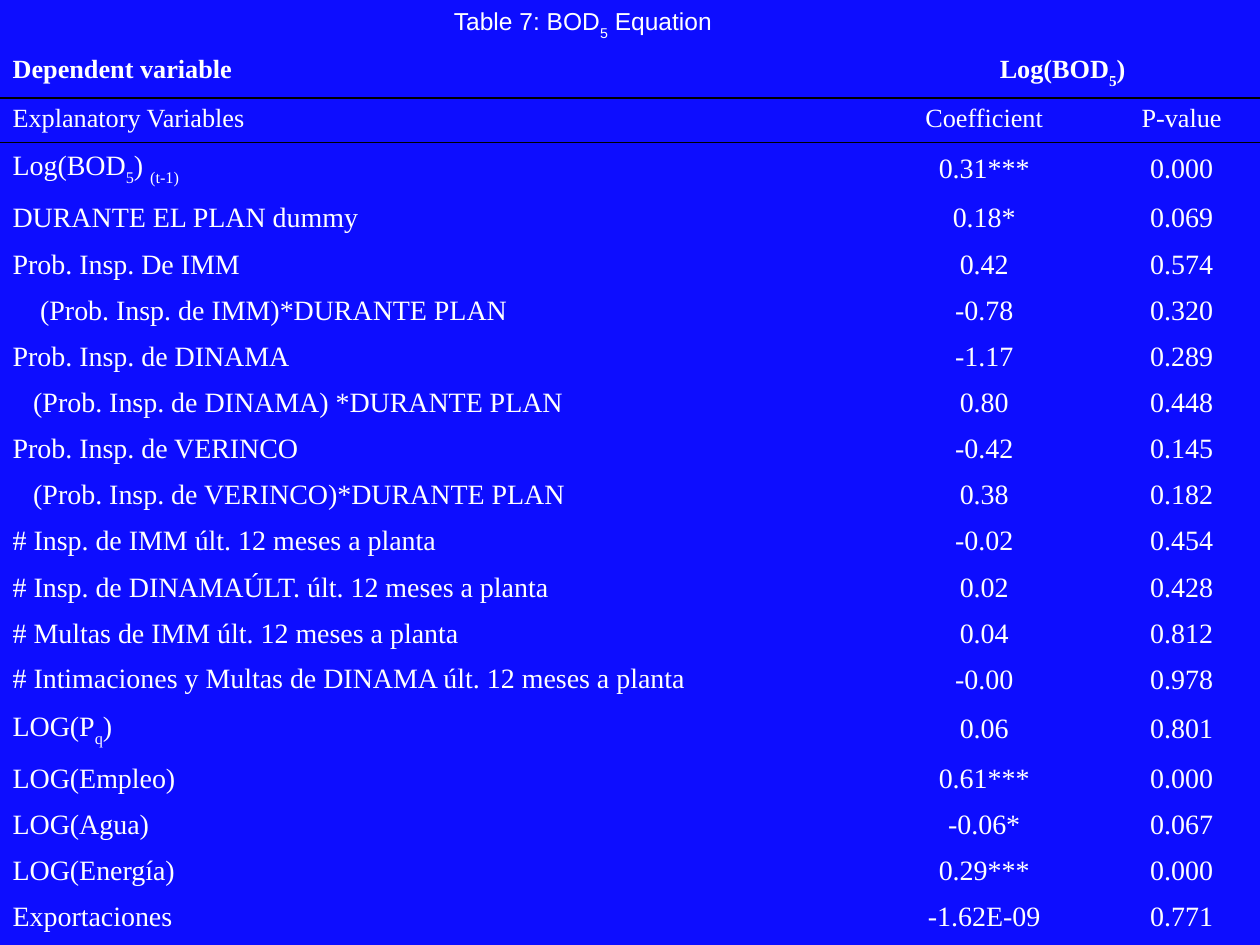
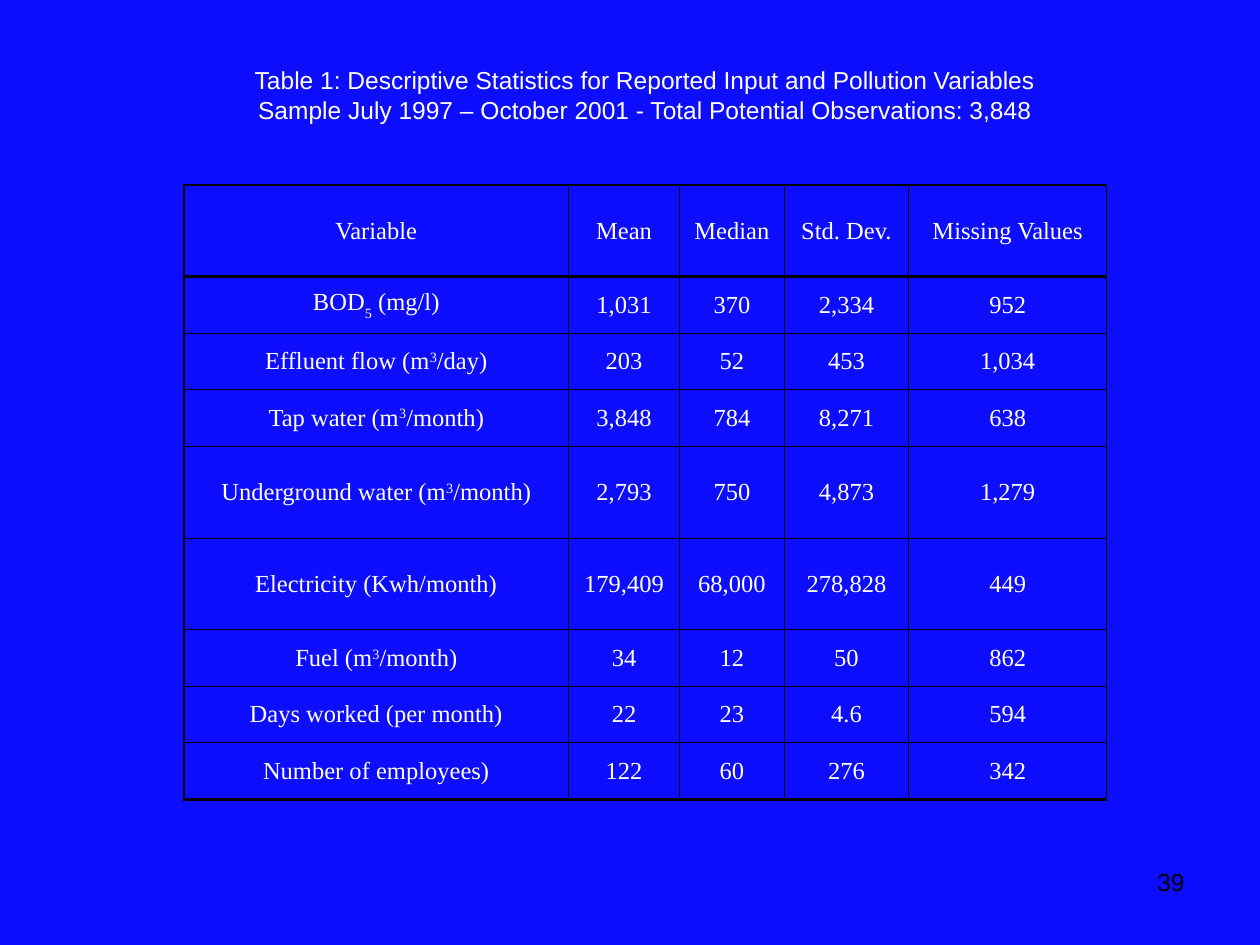
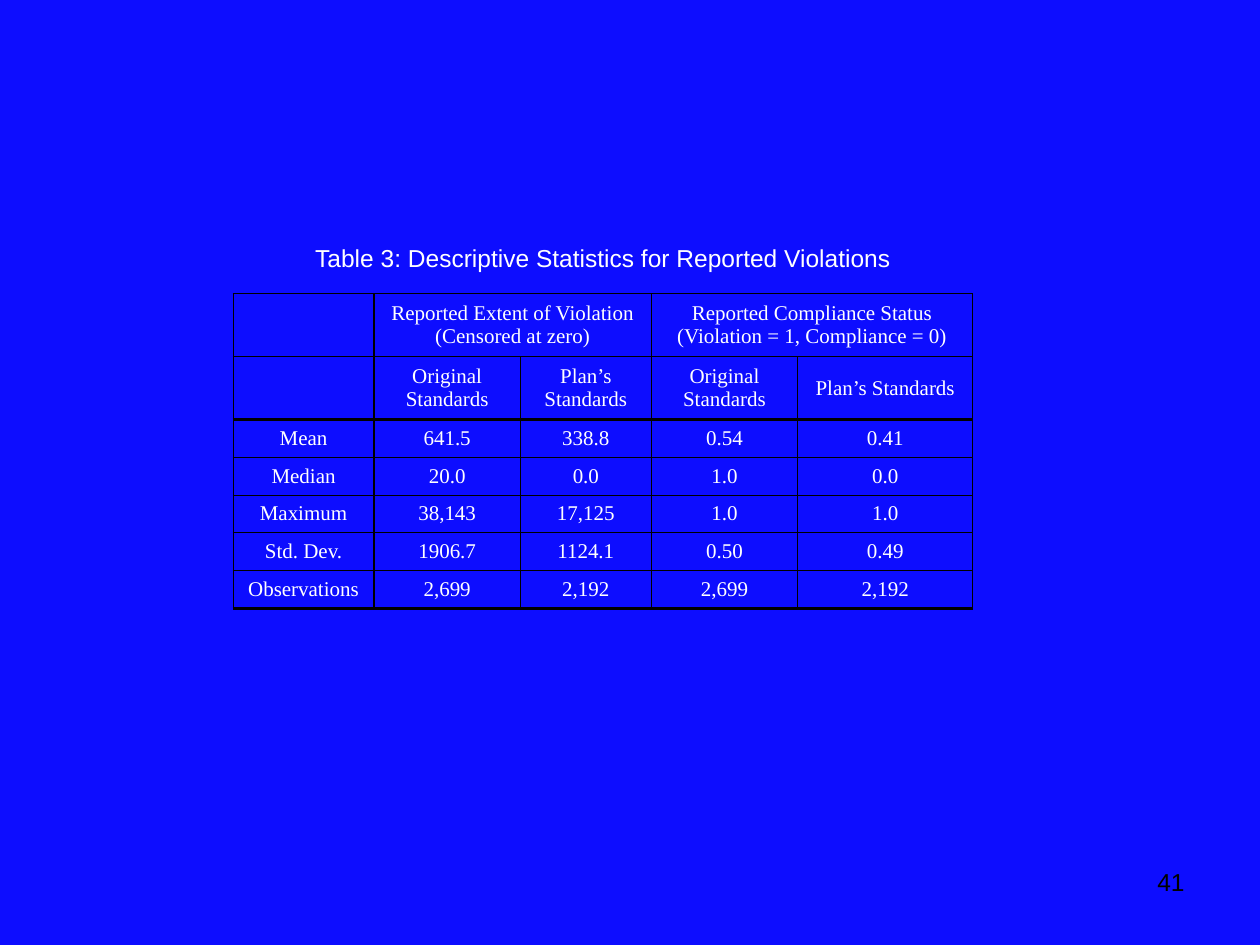
"""Builds three slides of regression and descriptive-statistics tables."""
from dataclasses import dataclass

from lxml.etree import SubElement
from pptx import Presentation
from pptx.dml.color import RGBColor as Rgb
from pptx.enum.text import MSO_ANCHOR as Anchor, MSO_AUTO_SIZE as AutoSize, PP_ALIGN as Align
from pptx.oxml.ns import qn
from pptx.util import Cm, Pt


@dataclass(frozen=True)
class Theme:
    background: str = "0D0DFF"
    text: str = "FFFFFF"
    line: str = "000000"
    heading_font: str = "Arial"
    table_font: str = "Times New Roman"
    heading_size: int = 14
    regression_size: int = 16
    regression_head_size: int = 15
    inputs_size: int = 14
    violations_size: int = 12
    hairline: float = 0.75
    rule: float = 1
    heavy_rule: float = 2


THEME = Theme()
BASELINES = {"_": "-30000", "^": "30000"}

REGRESSION_ROWS = [
    ["Dependent variable", "Log(BOD|_5|)", ""],
    ["Explanatory Variables", "Coefficient", "P-value"],
    ["Log(BOD|_5|) |_(t-1)", "0.31***", "0.000"],
    ["DURANTE EL PLAN dummy", "0.18*", "0.069"],
    ["Prob. Insp. De IMM", "0.42", "0.574"],
    ["(Prob. Insp. de IMM)*DURANTE PLAN", "-0.78", "0.320"],
    ["Prob. Insp. de DINAMA", "-1.17", "0.289"],
    ["(Prob. Insp. de DINAMA) *DURANTE PLAN", "0.80", "0.448"],
    ["Prob. Insp. de VERINCO", "-0.42", "0.145"],
    ["(Prob. Insp. de VERINCO)*DURANTE PLAN", "0.38", "0.182"],
    ["# Insp. de IMM últ. 12 meses a planta", "-0.02", "0.454"],
    ["# Insp. de DINAMAÚLT. últ. 12 meses a planta", "0.02", "0.428"],
    ["# Multas de IMM últ. 12 meses a planta", "0.04", "0.812"],
    ["# Intimaciones y Multas de DINAMA últ. 12 meses a planta", "-0.00", "0.978"],
    ["LOG(P|_q|)", "0.06", "0.801"],
    ["LOG(Empleo)", "0.61***", "0.000"],
    ["LOG(Agua)", "-0.06*", "0.067"],
    ["LOG(Energía)", "0.29***", "0.000"],
    ["Exportaciones", "-1.62E-09", "0.771"],
]
INPUT_ROWS = [
    ["Variable", "Mean", "Median", "Std. Dev.", "Missing Values"],
    ["BOD|_5| (mg/l)", "1,031", "370", "2,334", "952"],
    ["Effluent flow (m|^3|/day)", "203", "52", "453", "1,034"],
    ["Tap water (m|^3|/month)", "3,848", "784", "8,271", "638"],
    ["Underground water (m|^3|/month)", "2,793", "750", "4,873", "1,279"],
    ["Electricity (Kwh/month)", "179,409", "68,000", "278,828", "449"],
    ["Fuel (m|^3|/month)", "34", "12", "50", "862"],
    ["Days worked (per month)", "22", "23", "4.6", "594"],
    ["Number of employees)", "122", "60", "276", "342"],
]
VIOLATION_ROWS = [
    ["", "Reported Extent of Violation\n(Censored at zero)", "",
     "Reported Compliance Status\n(Violation = 1, Compliance = 0)", ""],
    [""] + ["Original Standards", "Plan’s Standards"] * 2,
    ["Mean", "641.5", "338.8", "0.54", "0.41"],
    ["Median", "20.0", "0.0", "1.0", "0.0"],
    ["Maximum", "38,143", "17,125", "1.0", "1.0"],
    ["Std. Dev.", "1906.7", "1124.1", "0.50", "0.49"],
    ["Observations", "2,699", "2,192", "2,699", "2,192"],
]


def apply(target, values):
    """Set each named attribute of the target."""
    for name, value in values.items():
        setattr(target, name, value)


class Deck:
    """Holds the theme, the presentation and the current slide."""

    def __init__(self, theme):
        self.theme = theme
        self.presentation = Presentation()
        apply(self.presentation, {"slide_width": Cm(25.4), "slide_height": Cm(19.05)})
        fill = self.presentation.slide_master.background.fill
        fill.solid()
        fill.fore_color.rgb = Rgb.from_string(theme.background)
        self.slide = None

    def add_text(self, frame, text, align, color, **font):
        """Add paragraphs split by line breaks, with |_sub| and |^super| parts."""
        for index, line in enumerate(text.split("\n")):
            paragraph = frame.add_paragraph() if index else frame.paragraphs[0]
            paragraph.alignment = align
            for part in filter(None, line.split("|")):
                run = paragraph.add_run()
                run.text = part.lstrip("_^")
                apply(run.font, font)
                run.font.color.rgb = Rgb.from_string(color)
                if part[0] in BASELINES:
                    run.font._element.set("baseline", BASELINES[part[0]])

    def add_slide(self, title, box, align=Align.CENTER, wrap=True):
        """Start a title-only slide with its formatted title."""
        layout = self.presentation.slide_layouts.get_by_name("Title Only")
        self.slide = self.presentation.slides.add_slide(layout)
        shape = self.slide.shapes.title
        apply(shape, dict(zip(("left", "top", "width", "height"), map(Cm, box))))
        apply(shape.text_frame, {"vertical_anchor": Anchor.TOP, "word_wrap": wrap,
                                 "auto_size": AutoSize.NONE})
        self.add_text(shape.text_frame, title, align, self.theme.text,
                      name=self.theme.heading_font, size=Pt(self.theme.heading_size))

    def add_page_number(self, number):
        """Add the page number at the lower right."""
        box = self.slide.shapes.add_textbox(Cm(18.21), Cm(17.35), Cm(5.92), Cm(1.32))
        box.text_frame.word_wrap = True
        self.add_text(box.text_frame, str(number), Align.RIGHT, self.theme.line,
                      name=self.theme.heading_font, size=Pt(self.theme.heading_size))

    def draw_borders(self, cell, widths):
        """Draw the left, right, top and bottom borders of a cell."""
        properties = cell._tc.get_or_add_tcPr()
        for side, width in zip("LRTB", widths):
            line = SubElement(properties, qn(f"a:ln{side}"), w=str(Pt(width)))
            if width:
                fill = SubElement(line, qn("a:solidFill"))
                SubElement(fill, qn("a:srgbClr"), val=self.theme.line)
            else:
                SubElement(line, qn("a:noFill"))

    def add_table(self, rows, position, widths, heights, size, grid, rules, merges=(),
                  first_align=Align.CENTER, row_fonts=None, cell_formats=None):
        """Add a transparent table; rules maps a horizontal line's index to its width."""
        left, top = map(Cm, position)
        table = self.slide.shapes.add_table(
            len(rows), len(widths), left, top, Cm(sum(widths)), Cm(sum(heights))).table
        apply(table, {"first_row": False, "horz_banding": False})
        for column, width in zip(table.columns, widths):
            column.width = Cm(width)
        for row, height in zip(table.rows, heights):
            row.height = Cm(height)
        for row, column in merges:
            table.cell(row, column).merge(table.cell(row, column + 1))
        for r, row in enumerate(rows):
            font = {"name": self.theme.table_font, "size": Pt(size), "bold": False}
            font.update((row_fonts or {}).get(r, {}))
            for c, text in enumerate(row):
                cell = table.cell(r, c)
                self.draw_borders(cell, (grid, grid, rules.get(r, grid), rules.get(r + 1, grid)))
                cell.fill.background()
                cell.vertical_anchor = Anchor.MIDDLE
                apply(cell, (cell_formats or {}).get((r, c), {}))
                self.add_text(cell.text_frame, text, Align.CENTER if c else first_align,
                              self.theme.text, **font)


def main():
    """Build and save the presentation."""
    deck = Deck(THEME)

    deck.add_slide("Table 7: BOD|_5| Equation ", (7.92, 0, 7.8, 1.45))
    head_size = Pt(THEME.regression_head_size)
    at_top = {"vertical_anchor": Anchor.TOP}
    formats = {(row, column): at_top for row in range(2) for column in range(3)}
    formats[13, 0] = at_top
    formats.update({(row, 0): {"margin_left": Cm(inset)}
                    for row, inset in {5: 0.81, 7: 0.67, 9: 0.67}.items()})
    heights = [0.99, 0.89] + [1.07 if "|" in row[0] else 0.93 for row in REGRESSION_ROWS[2:]]
    deck.add_table(REGRESSION_ROWS, (0, 0.99), (17.44, 4.8, 3.16), heights,
                   THEME.regression_size, 0, {1: THEME.rule, 2: THEME.rule},
                   merges=[(0, 1)], first_align=Align.JUSTIFY,
                   row_fonts={0: {"size": head_size, "bold": True}, 1: {"size": head_size}},
                   cell_formats=formats)

    deck.add_slide("Table 1: Descriptive Statistics for Reported Input and Pollution Variables\n"
                   "Sample July 1997 – October 2001 - Total Potential Observations: 3,848",
                   (4.7, 1.19, 16.61, 2.06))
    heights = [1.85 if row in (0, 4, 5) else 1.14 for row in range(len(INPUT_ROWS))]
    deck.add_table(INPUT_ROWS, (3.71, 3.73), (7.75, 2.24, 2.11, 2.51, 3.99), heights,
                   THEME.inputs_size, THEME.hairline,
                   {1: THEME.heavy_rule, len(INPUT_ROWS): THEME.heavy_rule})
    deck.add_page_number(39)

    deck.add_slide("Table 3: Descriptive Statistics for Reported Violations",
                   (6.1, 4.78, 12.17, 1.45), Align.LEFT, wrap=False)
    deck.add_table(VIOLATION_ROWS, (4.7, 5.92), (2.84, 2.95, 2.64, 2.95, 3.53),
                   [1.27] * 2 + [0.76] * 5, THEME.violations_size, THEME.hairline,
                   {2: THEME.heavy_rule, len(VIOLATION_ROWS): THEME.heavy_rule},
                   merges=[(0, 1), (0, 3)])
    deck.add_page_number(41)

    deck.presentation.save("out.pptx")


if __name__ == "__main__":
    main()
